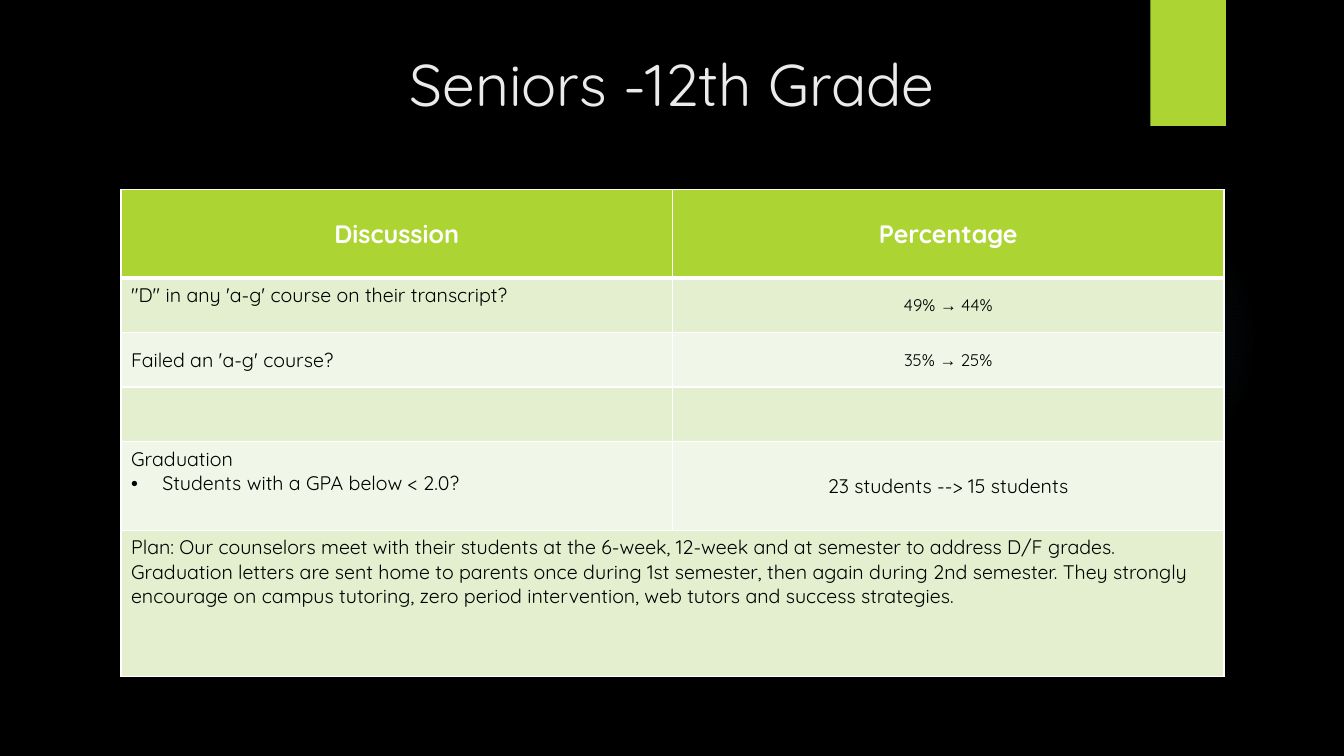
from dataclasses import dataclass

from lxml import etree
from pptx import Presentation
from pptx.dml.color import RGBColor
from pptx.enum.shapes import MSO_SHAPE
from pptx.enum.text import MSO_ANCHOR, PP_ALIGN
from pptx.oxml import parse_xml
from pptx.oxml.ns import qn
from pptx.util import Inches, Pt

RECT, OVAL = MSO_SHAPE.RECTANGLE, MSO_SHAPE.OVAL
TOP, MIDDLE = MSO_ANCHOR.TOP, MSO_ANCHOR.MIDDLE
LEFT, CENTER = PP_ALIGN.LEFT, PP_ALIGN.CENTER
SPACE = "http://schemas.openxmlformats.org/drawingml/2006/main"


@dataclass(frozen=True)
class Theme:
    back: str = "000000"
    lime: str = "ACD433"
    glow: str = "7AC4F0"
    bands: tuple = ("F1F7E8", "E3EFCE")
    pale: str = "EBEBEB"
    white: str = "FFFFFF"
    ink: str = "000000"
    face: str = "Quicksand"
    arrow: str = "Times New Roman"
    title: int = 42
    head: int = 18
    body: int = 14
    small: int = 12


THEME = Theme()
COLS = [5.47, 5.47]
ROWS = [0.88, 0.54, 0.54, 0.54, 0.88, 1.45]
PLAN = (
    "Plan: Our counselors meet with their students at the 6-week, 12-week "
    "and at semester to address D/F grades.  Graduation letters are sent home "
    "to parents once during 1st semester, then again during 2nd semester. "
    "They strongly encourage on campus tutoring, zero period intervention, "
    "web tutors and success strategies."
)


def paint(fill, tone):
    fill.solid()
    fill.fore_color.rgb = RGBColor.from_string(tone)


def place(item, left, top, width, height):
    box = {"left": left, "top": top, "width": width, "height": height}
    for name, size in box.items():
        setattr(item, name, Inches(size))


def style(font, size, tone, bold=False, face=THEME.face):
    look = {"size": Pt(size), "bold": bold, "name": face}
    for name, value in look.items():
        setattr(font, name, value)
    font.color.rgb = RGBColor.from_string(tone)


def write(para, text, size, tone, bold=False, align=LEFT):
    """Add the text; an arrow and its space take the arrow face."""
    para.alignment = align
    before, mark, after = text.partition("→ ")
    for part, face in ((before, THEME.face), (mark, THEME.arrow), (after, THEME.face)):
        if part:
            run = para.add_run()
            run.text = part
            style(run.font, size, tone, bold, face)


def bullet(para):
    props = para._p.get_or_add_pPr()
    props.set("marL", str(Inches(0.31)))
    props.set("indent", str(-Inches(0.31)))
    etree.SubElement(props, qn("a:buFont"), typeface="Arial")
    etree.SubElement(props, qn("a:buChar"), char="•")


def edge(cell, base):
    """Draw white cell borders; base is the width of the lower one."""
    props = cell._tc.get_or_add_tcPr()
    sides = {"L": 1, "R": 1, "T": 1, "B": base}
    for spot, (side, width) in enumerate(sides.items()):
        props.insert(spot, parse_xml(
            f'<a:ln{side} xmlns:a="{SPACE}" w="{Pt(width)}"><a:solidFill>'
            f'<a:srgbClr val="{THEME.white}"/></a:solidFill></a:ln{side}>'))


def shape(slide, kind, tone, *box):
    item = slide.shapes.add_shape(kind, 0, 0, 0, 0)
    place(item, *box)
    item.shadow.inherit = False
    item.line.fill.background()
    paint(item.fill, tone)
    return item


def halo(item):
    """Swap the plain fill for a soft round glow."""
    stops = "".join(
        f'<a:gs pos="{pos}000"><a:srgbClr val="{THEME.glow}">'
        f'<a:alpha val="{alpha}000"/></a:srgbClr></a:gs>'
        for pos, alpha in ((0, 7), (36, 6), (69, 0)))
    fade = parse_xml(
        f'<a:gradFill xmlns:a="{SPACE}"><a:gsLst>{stops}</a:gsLst>'
        '<a:path path="circle"><a:fillToRect l="50000" t="50000" '
        'r="50000" b="50000"/></a:path></a:gradFill>')
    props = item._element.spPr
    props.replace(props.find(qn("a:solidFill")), fade)


def heading(slide, text):
    title = slide.shapes.title
    place(title, 1.52, 0.42, 10.29, 1.53)
    frame = title.text_frame
    frame.word_wrap = True
    frame.vertical_anchor = TOP
    write(frame.paragraphs[0], text, THEME.title, THEME.pale, align=CENTER)
    slide.shapes._spTree.append(title._element)


def table(slide):
    grid = slide.shapes.add_table(
        len(ROWS), len(COLS), Inches(1.2), Inches(1.88),
        Inches(sum(COLS)), Inches(sum(ROWS))).table
    for col, width in zip(grid.columns, COLS):
        col.width = Inches(width)
    for num, (row, height) in enumerate(zip(grid.rows, ROWS)):
        row.height = Inches(height)
        for cell in row.cells:
            paint(cell.fill, THEME.bands[num % 2] if num else THEME.lime)
            edge(cell, 1 if num else 3)
    grid.cell(5, 0).merge(grid.cell(5, 1))
    return grid


def put(cell, text, size, anchor=MIDDLE, align=CENTER, tone=THEME.ink, bold=False):
    cell.vertical_anchor = anchor
    write(cell.text_frame.paragraphs[0], text, size, tone, bold, align)


def main():
    deck = Presentation()
    deck.slide_width, deck.slide_height = Inches(13.33), Inches(7.5)
    slide = deck.slides.add_slide(deck.slide_layouts[5])
    paint(slide.background.fill, THEME.back)

    # Backdrop and title
    halo(shape(slide, OVAL, THEME.glow, 9.41, 1.83, 3.08, 3.08))
    shape(slide, RECT, THEME.lime, 11.41, 0, 0.75, 1.25)
    heading(slide, "Seniors -12th Grade")

    # Table heads
    grid = table(slide)
    for col, text in enumerate(("Discussion", "Percentage")):
        put(grid.cell(0, col), text, THEME.head, tone=THEME.white, bold=True)

    # Topics and plan
    topics = {
        1: ("\"D\" in any 'a-g' course on their transcript?", TOP),
        2: ("Failed an 'a-g' course?", MIDDLE),
        4: ("Graduation", TOP),
        5: (PLAN, TOP),
    }
    for row, (text, anchor) in topics.items():
        put(grid.cell(row, 0), text, THEME.body, anchor, LEFT)
    point = grid.cell(4, 0).text_frame.add_paragraph()
    bullet(point)
    write(point, "Students with a GPA below < 2.0?", THEME.body, THEME.ink)

    # Results
    put(grid.cell(1, 1), "49% → 44%", THEME.small)
    put(grid.cell(2, 1), "35% → 25%", THEME.small)
    put(grid.cell(4, 1), "23 students --> 15 students", THEME.body)

    deck.save("out.pptx")


if __name__ == "__main__":
    main()
